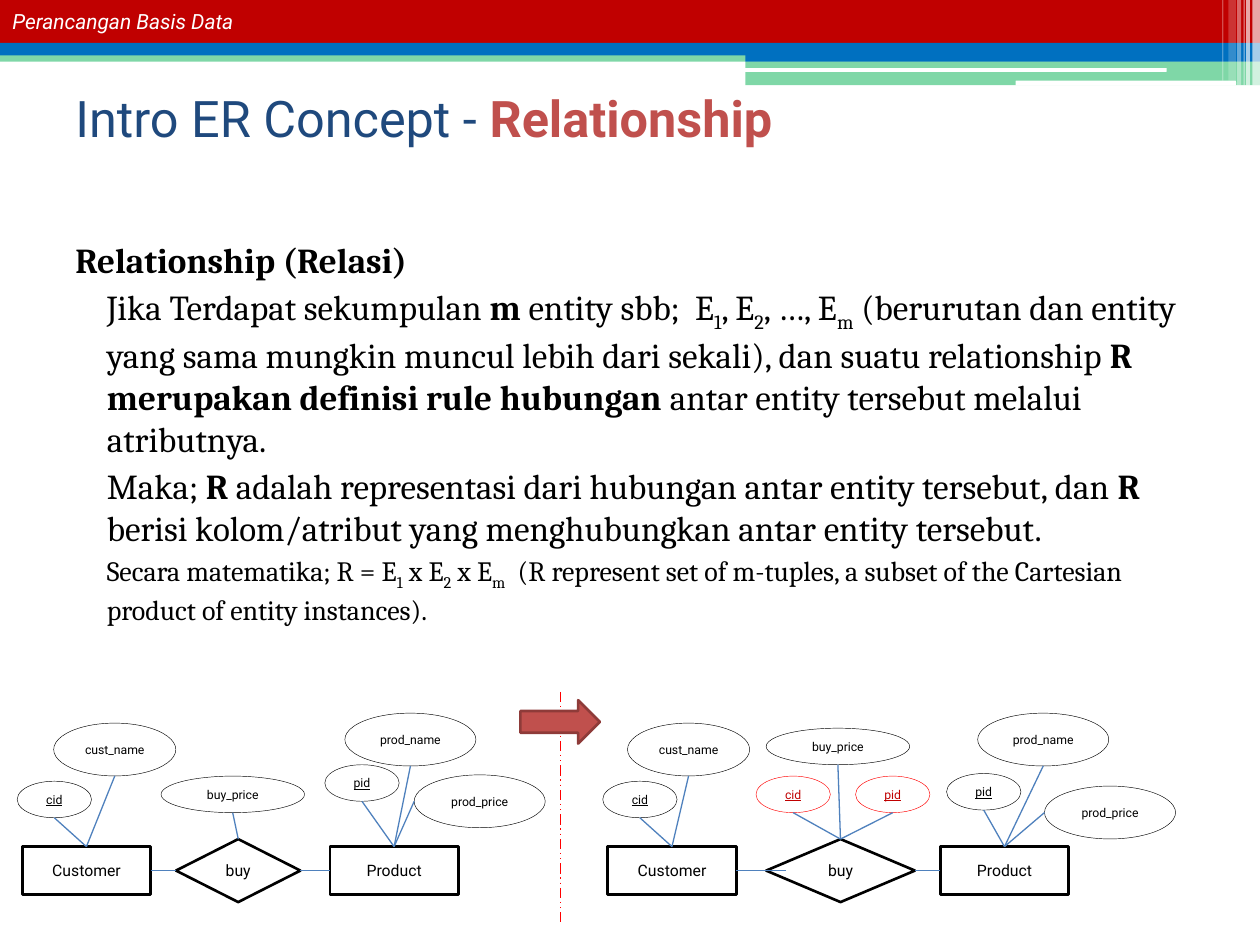
from lxml import etree
from pptx import Presentation
from pptx.dml.color import RGBColor
from pptx.enum import dml, shapes, text
from pptx.oxml import ns
from pptx.util import Pt

HUES = {
    "white": "FFFFFF", "black": "000000", "crimson": "C00000", "red": "FF0000",
    "blue": "0070C0", "green": "00B050", "navy": "1F497D", "brick": "C0504D",
    "rust": "8E3B39", "steel": "4F81BD",
}
KIND = shapes.MSO_SHAPE
TOP, LEFT, BOTTOM, RIGHT = range(4)
SIZES = {
    "cid": (42.5, 20.9), "pid": (42.5, 20.9), "cust_name": (69.8, 30.2),
    "buy_price": (82, 20.9), "prod_name": (74.9, 30.2), "prod_price": (74.9, 30.2),
}
KEYS = ("cid", "pid")


def hue(name):
    return RGBColor.from_string(HUES[name])


def style(font, size, color, face="Roboto"):
    font.size, font.name = Pt(size), face
    font.color.rgb = hue(color)


def shape(slide, kind, box, fill, line=None, width=0, alpha=None):
    item = slide.shapes.add_shape(kind, *map(Pt, box))
    item.shadow.inherit = False
    item.fill.solid()
    item.fill.fore_color.rgb = hue(fill)
    if alpha:
        tint = item.fill._xPr.find(".//" + ns.qn("a:srgbClr"))
        etree.SubElement(tint, ns.qn("a:alpha")).set("val", str(alpha * 1000))
    if line:
        item.line.color.rgb = hue(line)
        item.line.width = Pt(width)
    else:
        item.line.fill.background()
    return item


def label(item, words, size, color="black"):
    """Centre one short text inside a shape."""
    frame = item.text_frame
    frame.text = words
    frame.word_wrap = False
    frame.margin_left = frame.margin_right = frame.margin_top = frame.margin_bottom = 0
    frame.vertical_anchor = text.MSO_ANCHOR.MIDDLE
    par = frame.paragraphs[0]
    par.alignment = text.PP_ALIGN.CENTER
    style(par.runs[0].font, size, color)
    return par.runs[0].font


def line(slide, start, end, color="steel"):
    item = slide.shapes.add_connector(
        shapes.MSO_CONNECTOR.STRAIGHT, *map(Pt, (*start, *end)))
    item.line.color.rgb = hue(color)
    item.line.width = Pt(0.75)
    etree.SubElement(item._element.spPr, ns.qn("a:effectLst"))
    return item


def textbox(slide, box, anchor):
    frame = slide.shapes.add_textbox(*map(Pt, box)).text_frame
    frame.word_wrap = True
    frame.vertical_anchor = anchor
    return frame


def header(slide, box):
    x, y, w, _ = box
    half = 426
    bands = [
        (0, 28.8, w, 6.5, "green", 50), (0, 0, w, 24.5, "crimson", None),
        (0, 24.5, w, 7.2, "blue", None), (half, 28.1, w - half, 7.2, "blue", None),
        (half, 35.3, w - half, 13.4, "green", 50),
    ]
    for left, top, wide, high, color, alpha in bands:
        shape(slide, KIND.RECTANGLE, (x + left, y + top, wide, high), color, alpha=alpha)
    for left, top, wide, high in [(425.5, 38.9, 241.2, 2.2), (580.3, 46.1, 126, 2.9)]:
        shape(slide, KIND.ROUNDED_RECTANGLE, (x + left, y + top, wide, high), "white")
    stripes = [
        (715.7, 4.3, 49, 65), (712.1, 2.2, 49, 65), (710.6, 0.7, 49, 60),
        (707, 2.2, 49, 40), (702, 4.3, 46.1, 20), (698.4, 0.7, 46.1, 30),
    ]
    for left, wide, high, alpha in stripes:
        shape(slide, KIND.RECTANGLE, (x + left, y, wide, high), "white", alpha=alpha)
    frame = textbox(slide, (x, y - 2, 639.4, 28), text.MSO_ANCHOR.MIDDLE)
    frame.text = "Perancangan Basis Data"
    font = frame.paragraphs[0].runs[0].font
    style(font, 12, "white")
    font.italic = True


def title(slide, box):
    par = textbox(slide, box, text.MSO_ANCHOR.MIDDLE).paragraphs[0]
    for words, color, bold in [("Intro ER Concept - ", "navy", False),
                               ("Relationship", "brick", True)]:
        run = par.add_run()
        run.text = words
        style(run.font, 28.8, color)
        run.font.bold = bold


def body(slide, box):
    """Runs are (words, mark): b is bold, s is subscript."""
    pars = [
        (20, [("Relationship (Relasi)", "b")]),
        (20, [("Jika Terdapat sekumpulan ", ""), ("m", "b"), (" entity sbb;  E", ""),
              ("1", "s"), (", E", ""), ("2", "s"), (", …, E", ""), ("m", "s"),
              (" (berurutan dan entity yang sama mungkin muncul lebih dari sekali), "
               "dan suatu relationship ", ""),
              ("R merupakan definisi rule hubungan ", "b"),
              ("antar entity tersebut melalui atributnya.", "")]),
        (20, [("Maka; ", ""), ("R ", "b"),
              ("adalah representasi dari hubungan antar entity tersebut, dan ", ""),
              ("R ", "b"),
              ("berisi kolom/atribut yang menghubungkan antar entity tersebut.", "")]),
        (16, [("Secara matematika; R = E", ""), ("1", "s"), (" x E", ""), ("2", "s"),
              (" x E", ""), ("m", "s"),
              ("  (R represent set of m-tuples, a subset of the Cartesian product "
               "of entity instances).", "")]),
    ]
    frame = textbox(slide, box, text.MSO_ANCHOR.TOP)
    for i, (size, runs) in enumerate(pars):
        par = frame.add_paragraph() if i else frame.paragraphs[0]
        if i:
            par.space_before = Pt(3)
            par._p.get_or_add_pPr().set("marL", str(Pt(18)))
        for words, mark in runs:
            run = par.add_run()
            run.text = words
            style(run.font, size, "black", "Cambria")
            run.font.bold = mark == "b"
            if mark == "s":
                run._r.get_or_add_rPr().set("baseline", "-25000")


def node(slide, kind, box, name, attrs):
    """Draw an entity or relation with its attributes, offset from its corner."""
    x, y, w, _ = box
    item = shape(slide, kind, box, "white", "black", 1.5)
    label(item, name, 9)
    for attr, (dx, dy) in attrs.items():
        wide, high = SIZES[attr]
        left, top = x + dx, y + dy
        key = attr in KEYS
        alien = key and kind == KIND.FLOWCHART_DECISION
        oval = shape(slide, KIND.OVAL, (left, top, wide, high), "white",
                     "red" if alien else "black", 0.25)
        label(oval, attr, 7, "crimson" if alien else "black").underline = key
        end = ((left, top + high / 2) if attr == "prod_price"
               else (left + wide / 2, top + high))
        line(slide, (x + w / 2, y), end).begin_connect(item, TOP)
    return item


def diagram(slide, box, buy, product, attrs, inset=0):
    """Buy is (left, width) in the box; inset runs the first link into it."""
    x, y, _, h = box
    left, wide = buy
    wide_box, high = 73.4, 27.4
    top = y + h - 31.7
    mid = top + high / 2
    rel = node(slide, KIND.FLOWCHART_DECISION, (x + left, y + h - 36, wide, 36),
               "buy", attrs[1])
    cust, prod = [
        node(slide, KIND.FLOWCHART_PROCESS, (x + dx, top, wide_box, high), name, own)
        for dx, name, own in [(0, "Customer", attrs[0]), (product, "Product", attrs[2])]]
    link = line(slide, (x + wide_box, mid), (x + left + inset, mid))
    link.begin_connect(cust, RIGHT)
    if not inset:
        link.end_connect(rel, LEFT)
    link = line(slide, (x + left + wide, mid), (x + product, mid))
    link.begin_connect(rel, RIGHT)
    link.end_connect(prod, LEFT)


def divider(slide, box):
    x, y, w, h = box
    rule = line(slide, (x + 23, y), (x + 23, y + h), "red")
    rule.line.dash_style = dml.MSO_LINE.DASH_DOT_DOT
    shape(slide, KIND.RIGHT_ARROW, (x, y + 4.8, w, 24.8), "brick", "rust", 1.5)


def main():
    deck = Presentation()
    deck.slide_width, deck.slide_height = Pt(720), Pt(540)
    slide = deck.slides.add_slide(deck.slide_layouts[6])
    header(slide, (0, 0, 720, 49))
    title(slide, (36, 45.4, 648, 43.2))
    body(slide, (36, 132.6, 648, 353.4))
    diagram(slide, (12.7, 407.5, 299, 108), (87.9, 71.1), 175.8, [
        {"cid": (-2.9, -37.4), "cust_name": (18, -70.6)},
        {"buy_price": (-8.6, -36)},
        {"pid": (-2.9, -46.8), "prod_name": (8.6, -76.3), "prod_price": (48.2, -41)}])
    diagram(slide, (347.3, 407.5, 325, 108), (90.5, 85), 190, [
        {"cid": (-2.9, -37.4), "cust_name": (11.3, -70.6)},
        {"buy_price": (0, -63.4), "cid": (-5.8, -36), "pid": (51.1, -36)},
        {"pid": (3.6, -41.8), "prod_name": (21.4, -76.3), "prod_price": (59.6, -34.6)}],
        inset=11.5)
    divider(slide, (297.4, 395.3, 45.4, 131.8))
    deck.save("out.pptx")


if __name__ == "__main__":
    main()
